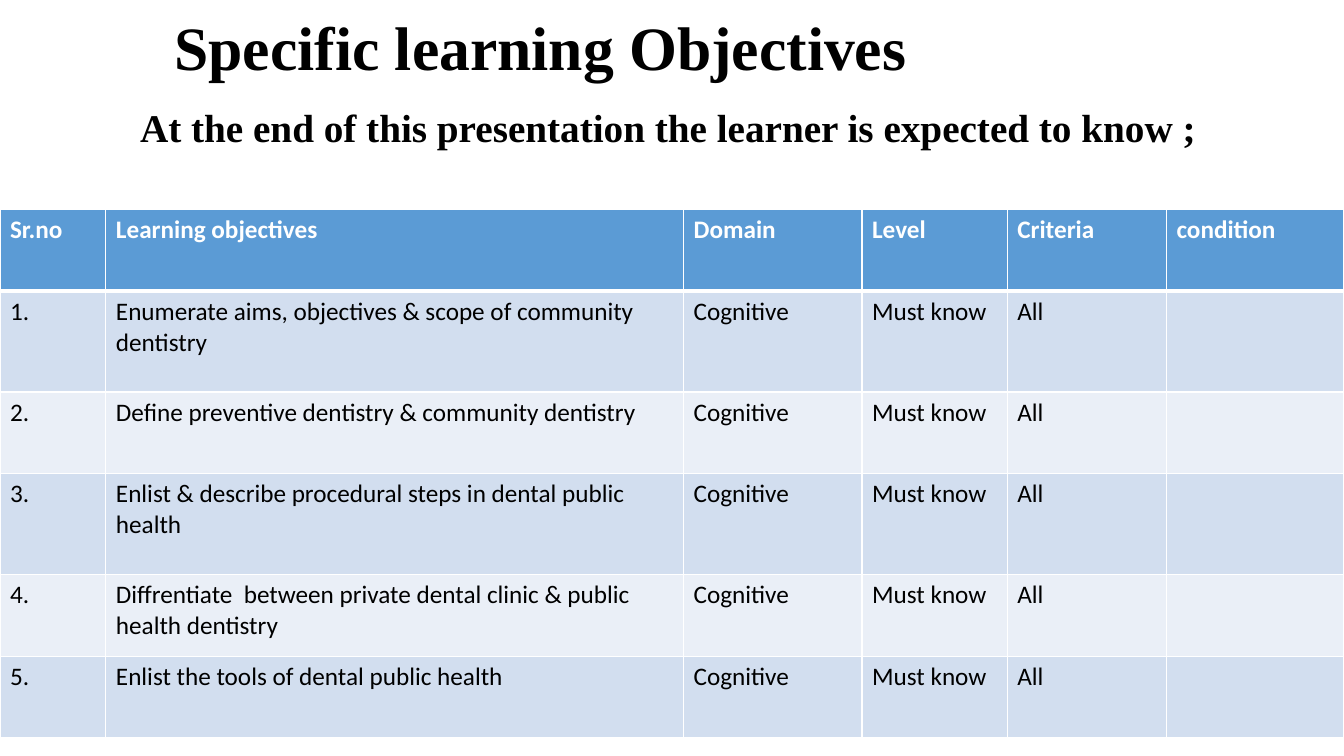
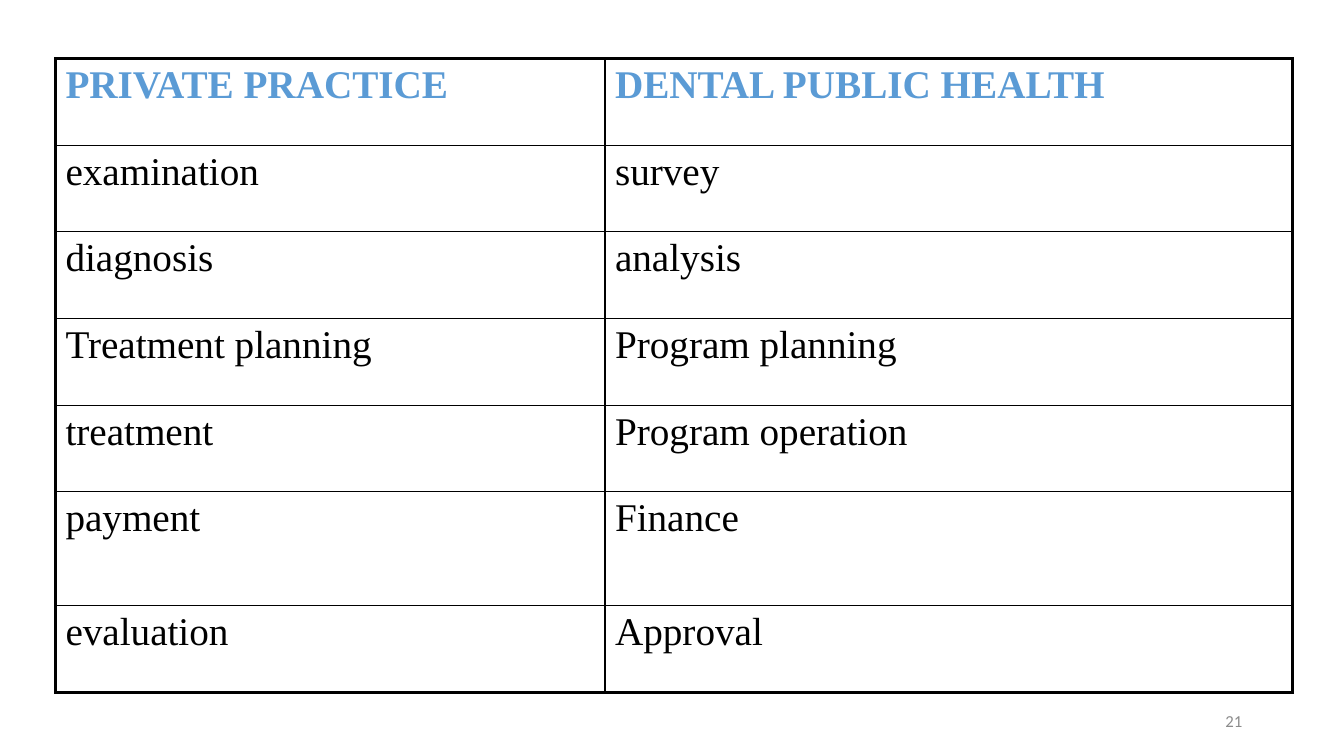
from lxml.etree import SubElement
from pptx import Presentation
from pptx.dml.color import RGBColor
from pptx.enum.text import MSO_ANCHOR as Anchor, MSO_AUTO_SIZE as AutoSize, PP_ALIGN as Align
from pptx.oxml.ns import qn
from pptx.util import Pt

EMU_PER_PX = 9144  # 100 px to the inch
TITLE_ONLY, BLANK = 5, 6

BLACK, WHITE, GREY = "000000", "FFFFFF", "8C8C8C"
BLUE, BAND_DARK, BAND_LIGHT = "5B9BD5", "D2DEEF", "EAEFF7"

SERIF = {"name": "Times New Roman", "size": Pt(28), "bold": False}
SERIF_BOLD = {**SERIF, "bold": True}
TITLE = {**SERIF_BOLD, "size": Pt(44)}
SANS = {"name": "Calibri", "size": Pt(18), "bold": False}
SANS_BOLD = {**SANS, "bold": True}
NUMBER = {**SANS, "size": Pt(12)}


def px(length):
    return length * EMU_PER_PX


def colour(hex_code):
    return RGBColor.from_string(hex_code)


def apply(target, values):
    """Set each attribute named in values on target."""
    for name, value in values.items():
        setattr(target, name, value)


class Deck:
    """Holds the presentation, the current slide and the shared style."""

    def __init__(self, width, height):
        self.prs = Presentation()
        apply(self.prs, {"slide_width": px(width), "slide_height": px(height)})
        self.slide = None

    def add_slide(self, layout):
        self.slide = self.prs.slides.add_slide(self.prs.slide_layouts[layout])

    def fill_text(self, frame, text, font, ink, align=Align.LEFT):
        paragraph = frame.paragraphs[0]
        paragraph.alignment = align
        run = paragraph.add_run()
        run.text = text
        apply(run.font, font)
        run.font.color.rgb = colour(ink)
        return paragraph

    def title(self, text, left, top, width, height):
        holder = self.slide.shapes.title
        apply(holder, {"left": px(left), "top": px(top),
                       "width": px(width), "height": px(height)})
        apply(holder.text_frame, {"auto_size": AutoSize.NONE,
                                  "vertical_anchor": Anchor.MIDDLE})
        self.fill_text(holder.text_frame, text, TITLE, BLACK).line_spacing = 0.9

    def text(self, text, box, font, ink, align=Align.LEFT, anchor=Anchor.TOP):
        frame = self.slide.shapes.add_textbox(*map(px, box)).text_frame
        apply(frame, {"word_wrap": True, "vertical_anchor": anchor})
        self.fill_text(frame, text, font, ink, align)

    def border(self, cell, ink, widths):
        """Draw the four sides of a cell; widths in points: left, right, top, bottom."""
        properties = cell._tc.get_or_add_tcPr()
        for side, width in zip(("lnL", "lnR", "lnT", "lnB"), widths):
            line = SubElement(properties, qn(f"a:{side}"), w=str(Pt(width)))
            solid = SubElement(line, qn("a:solidFill"))
            SubElement(solid, qn("a:srgbClr"), val=ink)

    def table(self, rows, left, top, widths, heights, style):
        """Draw rows; style(row, column) gives font, ink, fill, border ink and widths."""
        grid = self.slide.shapes.add_table(
            len(rows), len(widths), px(left), px(top),
            px(sum(widths)), px(sum(heights))).table
        apply(grid, {"first_row": False, "horz_banding": False})
        for column, width in zip(grid.columns, widths):
            column.width = px(width)
        for row, height in zip(grid.rows, heights):
            row.height = px(height)
        for r, row in enumerate(rows):
            for c, text in enumerate(row):
                cell = grid.cell(r, c)
                font, ink, fill, border_ink, border_widths = style(r, c)
                self.border(cell, border_ink, border_widths)
                if fill:
                    cell.fill.solid()
                    cell.fill.fore_color.rgb = colour(fill)
                else:
                    cell.fill.background()
                if text:
                    self.fill_text(cell.text_frame, text, font, ink)


def objectives_slide(deck):
    deck.add_slide(TITLE_ONLY)
    deck.title("Specific learning Objectives", 163, -10, 1013, 121)
    deck.text("At the end of this presentation the learner is expected to know ;",
              (129, 98, 1071, 57), SERIF_BOLD, BLACK)
    objectives = [
        "Enumerate aims, objectives & scope of community dentistry",
        "Define preventive dentistry & community dentistry",
        "Enlist & describe procedural steps in dental public health",
        "Diffrentiate  between private dental clinic & public health dentistry",
        "Enlist the tools of dental public health",
    ]
    header = ["Sr.no", "Learning objectives", "Domain", "Level", "Criteria", "condition"]
    rows = [header] + [[f"{number}.", objective, "Cognitive", "Must know", "All", ""]
                       for number, objective in enumerate(objectives, 1)]

    def banded(r, c):
        if r == 0:
            return SANS_BOLD, WHITE, BLUE, WHITE, (1, 1, 1, 3)
        fill = BAND_DARK if r % 2 else BAND_LIGHT
        return SANS, BLACK, fill, WHITE, (1, 1, 3 if r == 1 else 1, 1)

    deck.table(rows, 0, 208, [105, 573, 177, 144, 158, 176],
               [81, 100, 81, 100, 81, 81], banded)


def comparison_slide(deck):
    deck.add_slide(BLANK)
    deck.text("21", (942, 695, 300, 40), NUMBER, GREY, Align.RIGHT, Anchor.MIDDLE)
    rows = [
        ("PRIVATE PRACTICE", "DENTAL PUBLIC HEALTH"),
        ("examination", "survey"),
        ("diagnosis", "analysis"),
        ("Treatment planning", "Program planning"),
        ("treatment", "Program operation"),
        ("payment", "Finance"),
        ("evaluation", "Approval"),
    ]

    def framed(r, c):
        on_edge = (c == 0, c == 1, r == 0, r == len(rows) - 1)
        widths = [2.25 if edge else 1 for edge in on_edge]
        font, ink = (SERIF, BLACK) if r else (SERIF_BOLD, BLUE)
        return font, ink, None, BLACK, widths

    deck.table(rows, 55, 58, [545, 682], [86] * 5 + [113, 86], framed)


def main():
    deck = Deck(1333, 750)
    objectives_slide(deck)
    comparison_slide(deck)
    deck.prs.save("out.pptx")


if __name__ == "__main__":
    main()
